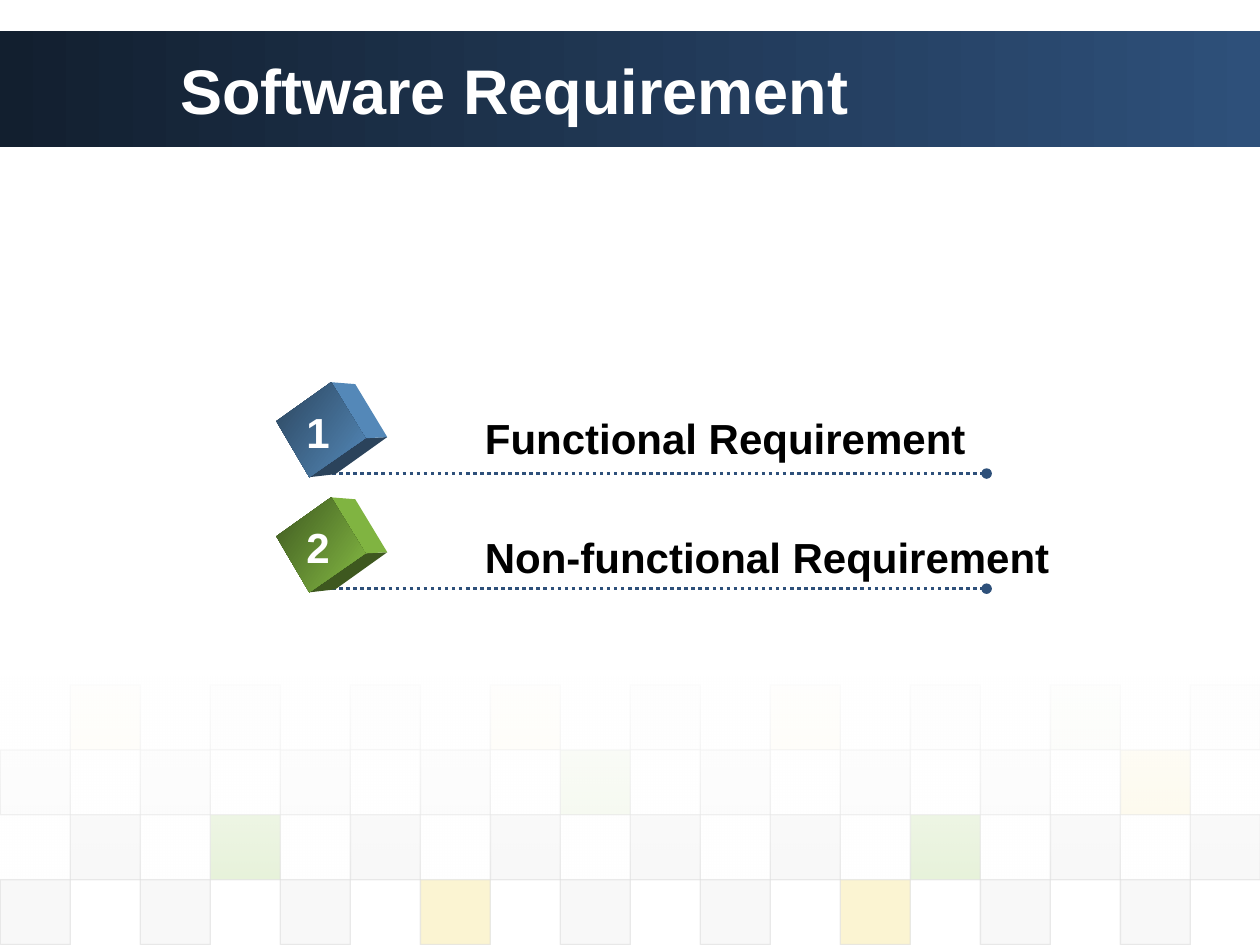
from lxml.etree import SubElement
from pptx import Presentation
from pptx.dml.color import RGBColor
from pptx.enum.dml import MSO_LINE
from pptx.enum.shapes import MSO_CONNECTOR, MSO_SHAPE
from pptx.enum.text import MSO_ANCHOR, MSO_AUTO_SIZE, PP_ALIGN
from pptx.oxml.ns import qn
from pptx.util import Pt

COLORS = {
    "navy": "2E507A", "night": "121F2F", "white": "FFFFFF", "black": "000000",
    "D": "DDDDDD", "E": "EAEAEA", "G": "8AC246", "Y": "EFC821",
}
CUBES = {
    "blue": {"light": "5489BA", "dark": "2C465E", "side": "5488B8", "base": "2B435B"},
    "green": {"light": "86BC44", "dark": "3E5820", "side": "80B441", "base": "3E581F"},
}
FACES = {
    "base": [(18.9, 54.3), (50.9, 32), (63.4, 31.4), (33.7, 52.6)],
    "side": [(31.4, 0), (45.1, 1.1), (63.4, 31.4), (50.9, 32)],
    "front": [(0, 22.3), (31.4, 0), (50.9, 32), (18.9, 54.3)],
}
TILE_ROWS = [("YEEYDYEGE", 5), ("DDDDGDDDY", 10), ("DGDDDDGDD", 20), ("DDDYDDYDD", 20)]
TILE_W, TILE_H, TILE_TOP = 40, 37.1, 391.4
ITEMS = [
    ("1", "Functional Requirement", "blue", 218.4, 232, 292),
    ("2", "Non-functional Requirement", "green", 284.2, 300.2, 340),
]


def rgb(value):
    return RGBColor.from_string(value)


def set_alpha(fill, percents):
    for color, percent in zip(fill.iter(qn("a:srgbClr")), percents):
        SubElement(color, qn("a:alpha")).set("val", str(percent * 1000))


def set_gradient(s, first, last, angle):
    s.fill.gradient()
    s.fill.gradient_angle = angle
    for stop, color, position in zip(s.fill.gradient_stops, (first, last), (0, 1)):
        stop.color.rgb = rgb(color)
        stop.position = position


def add_rect(slide, x, y, w, h):
    s = slide.shapes.add_shape(MSO_SHAPE.RECTANGLE, Pt(x), Pt(y), Pt(w), Pt(h))
    s.shadow.inherit = False
    s.line.fill.background()
    return s


def add_tile(slide, x, y, color, alpha):
    s = add_rect(slide, x, y, TILE_W, TILE_H)
    s.fill.solid()
    s.fill.fore_color.rgb = rgb(color)
    s.line.color.rgb = rgb(COLORS["D"])
    s.line.width = Pt(0.75)
    set_alpha(s._element.spPr, (alpha, 60))


def add_background(slide):
    band = add_rect(slide, 0, 18, 720, 66)
    set_gradient(band, COLORS["night"], COLORS["navy"], 0)
    for row, (keys, alpha) in enumerate(TILE_ROWS):
        for i, key in enumerate(keys):
            col = 2 * i + (row + 1) % 2
            add_tile(slide, 0.2 + col * TILE_W, TILE_TOP + row * TILE_H, COLORS[key], alpha)
    fade = add_rect(slide, 0, 386.6, 720, 116.6)
    set_gradient(fade, COLORS["white"], COLORS["white"], 270)
    set_alpha(fade._element.spPr, (90, 0))


def add_text(slide, text, x, y, w, h, size, color, align=PP_ALIGN.LEFT, wrap=False):
    tf = slide.shapes.add_textbox(Pt(x), Pt(y), Pt(w), Pt(h)).text_frame
    tf.word_wrap = wrap
    tf.auto_size = MSO_AUTO_SIZE.NONE if wrap else MSO_AUTO_SIZE.SHAPE_TO_FIT_TEXT
    tf.vertical_anchor = MSO_ANCHOR.MIDDLE if wrap else MSO_ANCHOR.TOP
    p = tf.paragraphs[0]
    p.alignment = align
    r = p.add_run()
    r.text = text
    for name, value in {"name": "Arial", "size": Pt(size), "bold": True}.items():
        setattr(r.font, name, value)
    r.font.color.rgb = rgb(COLORS[color])


def add_dotted_line(slide, y):
    s = slide.shapes.add_connector(MSO_CONNECTOR.STRAIGHT, Pt(185.8), Pt(y), Pt(563.8), Pt(y))
    s.line.color.rgb = rgb(COLORS["navy"])
    s.line.width = Pt(2)
    s.line.dash_style = MSO_LINE.ROUND_DOT
    SubElement(s.line._get_or_add_ln(), qn("a:tailEnd")).set("type", "oval")
    SubElement(s._element.spPr, qn("a:effectLst"))


def add_cube(slide, x, y, shades):
    for face, corners in FACES.items():
        points = [(Pt(x + dx), Pt(y + dy)) for dx, dy in corners]
        builder = slide.shapes.build_freeform(*points[0], scale=1.0)
        builder.add_line_segments(points[1:], close=True)
        s = builder.convert_to_shape()
        s.shadow.inherit = False
        s.line.fill.background()
        if face == "front":
            set_gradient(s, shades["dark"], shades["light"], 325)
        else:
            s.fill.solid()
            s.fill.fore_color.rgb = rgb(shades[face])


def add_item(slide, number, label, cube, cube_top, label_top, label_width):
    add_dotted_line(slide, cube_top + 52.2)
    add_cube(slide, 157.9, cube_top, CUBES[cube])
    add_text(slide, number, 167.8, cube_top + 10.2, 28, 36, 24, "white", PP_ALIGN.CENTER)
    add_text(slide, label, 270, label_top, label_width, 36, 24, "black")


def main():
    prs = Presentation()
    prs.slide_width, prs.slide_height = Pt(720), Pt(540)
    slide = prs.slides.add_slide(prs.slide_layouts[6])
    add_background(slide)
    add_text(slide, "Software Requirement", 95.8, 18, 581.8, 66, 36, "white", wrap=True)
    for item in ITEMS:
        add_item(slide, *item)
    prs.save("out.pptx")


if __name__ == "__main__":
    main()
